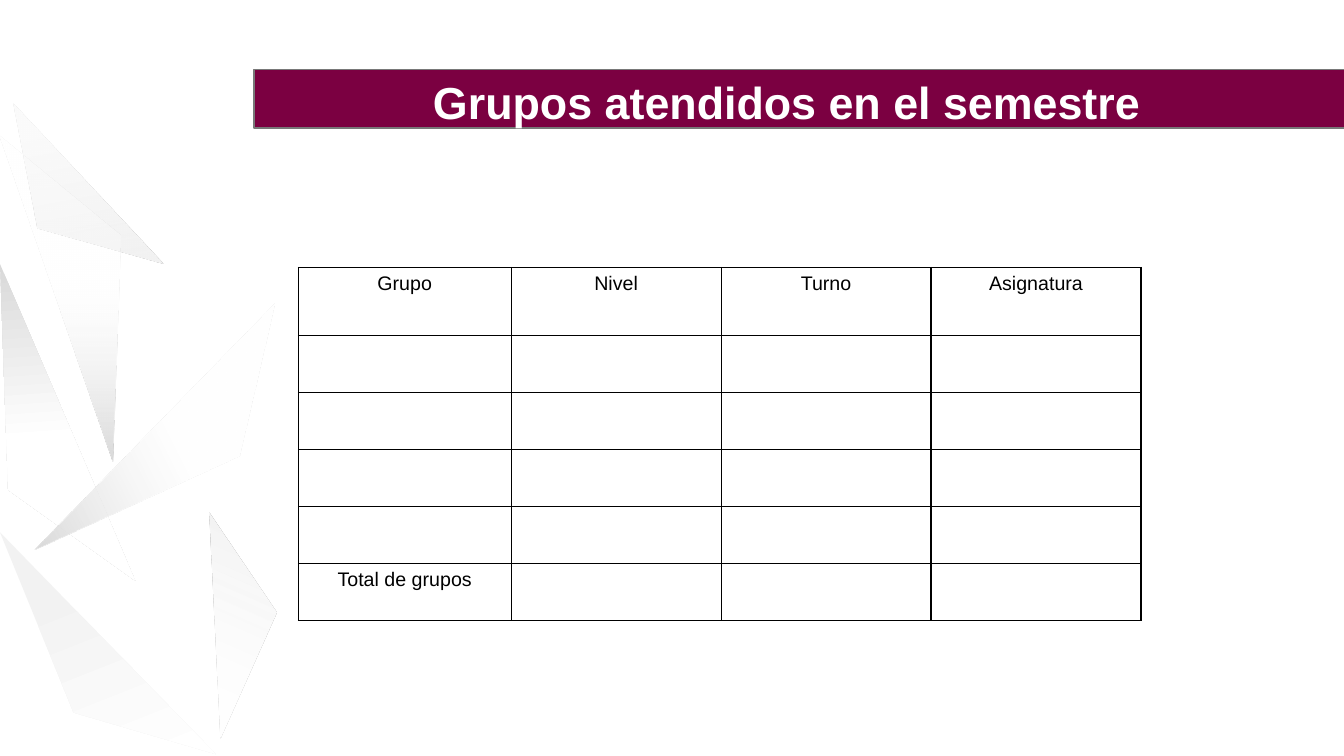
from lxml import etree
from pptx import Presentation
from pptx.dml.color import RGBColor
from pptx.enum.text import MSO_ANCHOR, PP_ALIGN
from pptx.oxml.ns import qn
from pptx.util import Pt

CENTER = PP_ALIGN.CENTER
BOTTOM = MSO_ANCHOR.BOTTOM
FONT = "Arial"

TITLE = "Grupos atendidos en el semestre"
HEADERS = ["Grupo", "Nivel", "Turno", "Asignatura"]
EMPTY_ROWS = 4
TOTAL_LABEL = "Total de grupos"

COLUMN_WIDTHS = [152, 150, 150, 150]
HEADER_HEIGHT, ROW_HEIGHT = 48.6, 40.7

# Corner points, gradient angle, gradient stops (position %, colour, opacity %)
SHARDS = [
    ([(26.6, 162.7), (9.4, 74.2), (116.6, 187.9)], 79.6,
     [(19, "F2F2F2", 32), (97, "F2F2F2", 100)]),
    ([(86.4, 168.5), (80.6, 329.8), (0, 97.2)], 270,
     [(0, "D9D9D9", 100), (55, "FFFFFF", 27)]),
    ([(197.3, 437.8), (157.7, 527.8), (149.8, 366.5)], 294,
     [(19, "FFFFFF", 51), (97, "F2F2F2", 100)]),
    ([(5.8, 349.9), (0, 188.6), (96.5, 414.7)], 86,
     [(0, "D9D9D9", 100), (55, "FFFFFF", 100)]),
    ([(52.6, 509), (0, 380.2), (154.1, 538.6)], 68.4,
     [(25, "F2F2F2", 100), (100, "FFFFFF", 100)]),
    ([(170.6, 325.4), (24.5, 392.4), (195.8, 216.7)], 333.5,
     [(0, "D9D9D9", 100), (55, "FFFFFF", 43)]),
]


def color(value):
    return RGBColor.from_string(value)


def add_xml(parent, tag, **attributes):
    return etree.SubElement(parent, qn(tag), {k: str(v) for k, v in attributes.items()})


def style_paragraph(paragraph, size, text_color, bold=False):
    paragraph.alignment = CENTER
    paragraph.font.name = FONT
    paragraph.font.size = Pt(size)
    paragraph.font.bold = bold
    paragraph.font.color.rgb = color(text_color)


def add_shard(slide, points, angle, stops):
    corners = [(Pt(x), Pt(y)) for x, y in points]
    builder = slide.shapes.build_freeform(*corners[0])
    builder.add_line_segments(corners[1:], close=True)
    shard = builder.convert_to_shape()
    shard.shadow.inherit = False
    shard.line.fill.background()
    shard.fill.gradient()
    gradient = shard.fill._xPr.find(qn("a:gradFill"))
    for child in list(gradient):
        gradient.remove(child)
    stop_list = add_xml(gradient, "a:gsLst")
    for position, stop_color, opacity in stops:
        stop = add_xml(stop_list, "a:gs", pos=position * 1000)
        stop_fill = add_xml(stop, "a:srgbClr", val=stop_color)
        if opacity < 100:
            add_xml(stop_fill, "a:alpha", val=opacity * 1000)
    add_xml(gradient, "a:lin", ang=round(angle * 60000), scaled=0)


def add_title(slide):
    title = slide.shapes.title
    title.left, title.top, title.width, title.height = Pt(181.4), Pt(49.7), Pt(779), Pt(41.8)
    title.fill.solid()
    title.fill.fore_color.rgb = color("7B0041")
    title.line.color.rgb = color("787878")
    title.line.width = Pt(0.96)
    frame = title.text_frame
    frame.text = TITLE
    frame.word_wrap = True
    frame.vertical_anchor = BOTTOM
    frame.margin_left = frame.margin_bottom = 0
    frame.margin_top, frame.margin_right = Pt(2.9), Pt(17.5)
    style_paragraph(frame.paragraphs[0], 32, "FFFFFF", bold=True)


def set_borders(cell):
    properties = cell._tc.get_or_add_tcPr()
    for side in ("a:lnL", "a:lnR", "a:lnT", "a:lnB"):
        border = add_xml(properties, side, w=Pt(1))
        add_xml(add_xml(border, "a:solidFill"), "a:srgbClr", val="000000")


def add_groups_table(slide):
    blank = [""] * len(HEADERS)
    rows = [HEADERS] + [blank] * EMPTY_ROWS + [[TOTAL_LABEL] + blank[1:]]
    heights = [HEADER_HEIGHT] + [ROW_HEIGHT] * (len(rows) - 1)
    table = slide.shapes.add_table(len(rows), len(HEADERS), Pt(213.1), Pt(191),
                                   Pt(sum(COLUMN_WIDTHS)), Pt(sum(heights))).table
    table.first_row = table.horz_banding = False
    for column, width in zip(table.columns, COLUMN_WIDTHS):
        column.width = Pt(width)
    for row, height, labels in zip(table.rows, heights, rows):
        row.height = Pt(height)
        for cell, label in zip(row.cells, labels):
            cell.text = label
            style_paragraph(cell.text_frame.paragraphs[0], 14, "000000")
            set_borders(cell)
            cell.fill.background()


def main():
    presentation = Presentation()
    presentation.slide_width, presentation.slide_height = Pt(960), Pt(540)
    slide = presentation.slides.add_slide(presentation.slide_layouts[5])
    for points, angle, stops in SHARDS:
        add_shard(slide, points, angle, stops)
    add_title(slide)
    add_groups_table(slide)
    presentation.save("out.pptx")


if __name__ == "__main__":
    main()
